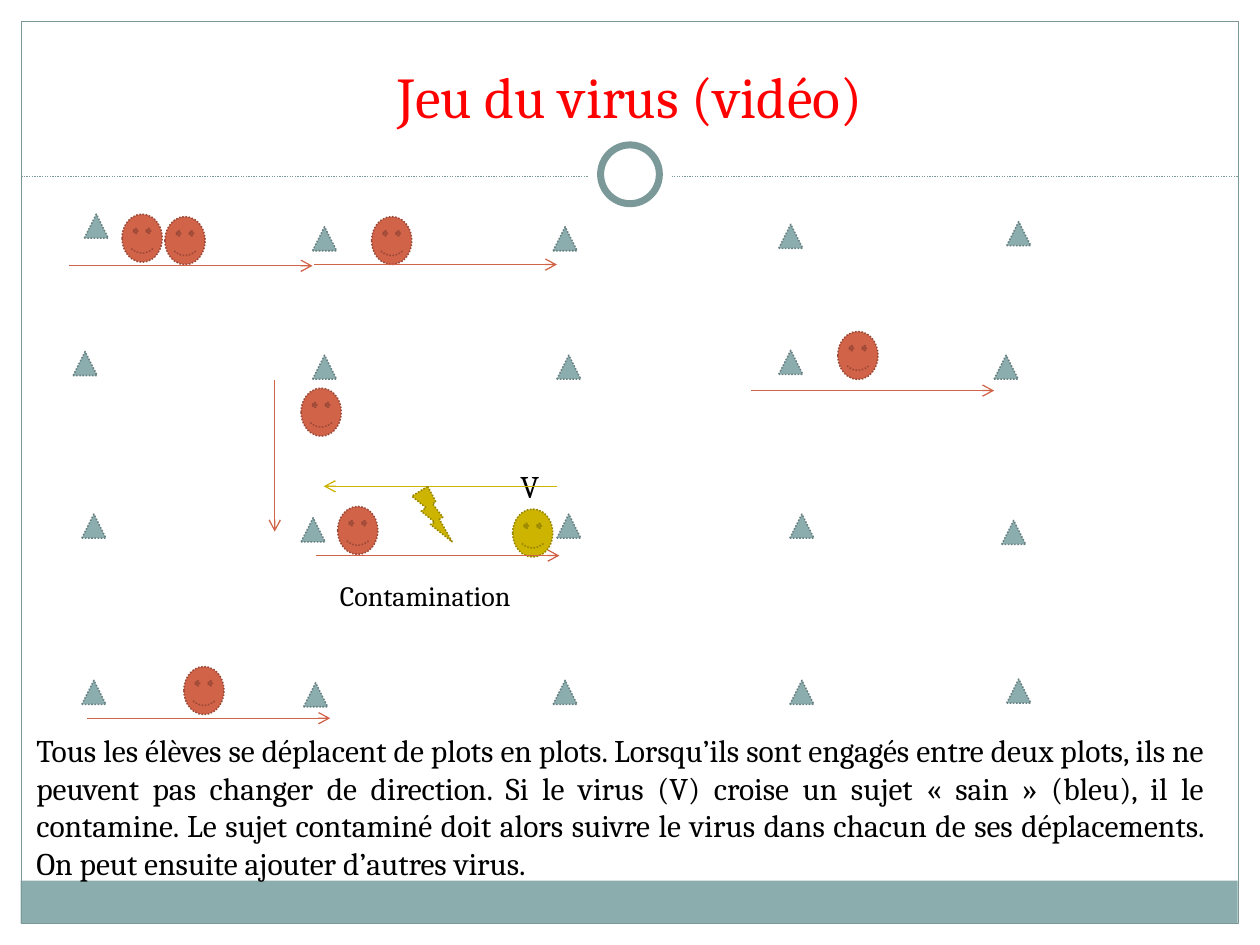
from lxml.etree import SubElement
from pptx import Presentation
from pptx.dml.color import RGBColor
from pptx.enum.dml import MSO_LINE
from pptx.enum.shapes import MSO_CONNECTOR, MSO_SHAPE
from pptx.enum.text import MSO_ANCHOR, MSO_AUTO_SIZE, PP_ALIGN
from pptx.oxml.ns import qn
from pptx.util import Pt

TEAL = RGBColor(0x8C, 0xAD, 0xAE)
TEAL_FRAME = RGBColor(0x7C, 0x99, 0x9A)
TEAL_EDGE = RGBColor(0x68, 0x80, 0x81)
HEALTHY = RGBColor(0xD1, 0x63, 0x49)
HEALTHY_EDGE = RGBColor(0x9B, 0x49, 0x36)
VIRUS = RGBColor(0xCC, 0xB4, 0x00)
VIRUS_EDGE = RGBColor(0x97, 0x85, 0x00)
RED = RGBColor(0xFF, 0x00, 0x00)
BLACK = RGBColor(0x00, 0x00, 0x00)
WHITE = RGBColor(0xFF, 0xFF, 0xFF)

CONE_COLUMNS = [
    [(48.2, 122.4), (41.8, 200.9), (46.8, 293.8), (46.8, 388.8)],
    [(178.6, 129.6), (178.6, 203), (172.1, 295.9), (173.5, 390.2)],
    [(316.1, 129.6), (318.2, 203), (318.2, 293.8), (316.1, 388.8)],
    [(445, 128.2), (445, 200.2), (451.4, 293.8), (451.4, 388.8)],
    [(575.3, 126.7), (568.1, 203), (572.4, 297.4), (575.3, 388.1)],
]
HEALTHY_PUPILS = [
    (69.8, 122.4), (94.3, 123.8), (478.8, 189.4), (212.4, 123.8),
    (105.1, 380.9), (193, 289.4), (172.1, 221.8),
]
RUN_LENGTH = 139
RUN_STARTS = [
    (180.7, 317.5), (49.7, 410.4), (429.1, 223.2), (179.3, 151.2), (39.6, 151.9),
]
RULES = (
    "Tous les élèves se déplacent de plots en plots. Lorsqu’ils sont engagés "
    "entre deux plots, ils ne peuvent pas changer de direction. Si le virus (V) "
    "croise un sujet « sain » (bleu), il le contamine. Le sujet contaminé doit "
    "alors suivre le virus dans chacun de ses déplacements. On peut ensuite "
    "ajouter d’autres virus."
)


def write_text(frame, text, *, size=18, color=BLACK, align=PP_ALIGN.LEFT,
               anchor=MSO_ANCHOR.TOP, fit=MSO_AUTO_SIZE.SHAPE_TO_FIT_TEXT):
    """Fill a text frame with one formatted paragraph."""
    frame.word_wrap = True
    frame.auto_size = fit
    frame.vertical_anchor = anchor
    paragraph = frame.paragraphs[0]
    paragraph.alignment = align
    run = paragraph.add_run()
    run.text = text
    run.font.name = "Cambria"
    run.font.size = Pt(size)
    run.font.color.rgb = color


def add_label(slide, text, left, top, width, height, **text_format):
    """Add a text box with formatted text."""
    label = slide.shapes.add_textbox(Pt(left), Pt(top), Pt(width), Pt(height))
    write_text(label.text_frame, text, **text_format)


def add_figure(slide, preset, left, top, width, height, *, fill=None, edge=None,
               weight=0.9, dash=MSO_LINE.ROUND_DOT):
    """Add a preset shape with a plain fill and outline."""
    figure = slide.shapes.add_shape(preset, Pt(left), Pt(top), Pt(width), Pt(height))
    figure.shadow.inherit = False
    if fill is None:
        figure.fill.background()
    else:
        figure.fill.solid()
        figure.fill.fore_color.rgb = fill
    if edge is None:
        figure.line.fill.background()
    else:
        figure.line.color.rgb = edge
        figure.line.width = Pt(weight)
        figure.line.dash_style = dash


def add_line(slide, start, end, color):
    """Add a thin straight line without shadow."""
    line = slide.shapes.add_connector(
        MSO_CONNECTOR.STRAIGHT, *(Pt(length) for length in (*start, *end)))
    line.line.color.rgb = color
    line.line.width = Pt(0.75)
    SubElement(line._element.spPr, qn("a:effectLst"))
    return line


def add_arrow(slide, start, end, color=HEALTHY):
    """Add a line with an open arrowhead at its end."""
    arrow = add_line(slide, start, end, color)
    SubElement(arrow._element.spPr.find(qn("a:ln")), qn("a:tailEnd"), type="arrow")


def add_pupil(slide, left, top, fill=HEALTHY, edge=HEALTHY_EDGE):
    """Add a smiling pupil."""
    add_figure(slide, MSO_SHAPE.SMILEY_FACE, left, top, 22.9, 27.4, fill=fill, edge=edge)


def add_frame(slide):
    """Add the footer band, border, divider and ring."""
    add_figure(slide, MSO_SHAPE.RECTANGLE, 11.8, 503.3, 695.5, 24.5, fill=TEAL)
    add_figure(slide, MSO_SHAPE.RECTANGLE, 12.2, 12.2, 695.5, 515.5,
               edge=TEAL_FRAME, weight=0.75, dash=MSO_LINE.SOLID)
    divider = add_line(slide, (12.2, 100.8), (707.8, 100.8), TEAL_FRAME)
    divider.line.dash_style = MSO_LINE.ROUND_DOT
    add_figure(slide, MSO_SHAPE.OVAL, 336, 75.6, 48, 48, fill=WHITE)
    add_figure(slide, MSO_SHAPE.OVAL, 343.2, 82.8, 33.6, 33.6, fill=WHITE,
               edge=TEAL_FRAME, weight=4, dash=MSO_LINE.SOLID)


def add_title(slide, text):
    """Place and fill the title placeholder."""
    title = slide.shapes.title
    title.left, title.top, title.width, title.height = Pt(24), Pt(18), Pt(672), Pt(60)
    write_text(title.text_frame, text, size=33, color=RED, align=PP_ALIGN.CENTER,
               anchor=MSO_ANCHOR.BOTTOM, fit=MSO_AUTO_SIZE.NONE)


def main():
    """Build the slide of the virus game."""
    deck = Presentation()
    deck.slide_width, deck.slide_height = Pt(720), Pt(540)
    slide = deck.slides.add_slide(deck.slide_layouts[5])
    add_frame(slide)
    add_title(slide, "Jeu du virus (vidéo)")

    for column in CONE_COLUMNS:
        for left, top in column:
            add_figure(slide, MSO_SHAPE.FLOWCHART_EXTRACT, left, top, 13.7, 13.7,
                       fill=TEAL, edge=TEAL_EDGE)
    for left, top in HEALTHY_PUPILS:
        add_pupil(slide, left, top)
    add_pupil(slide, 293, 290.9, VIRUS, VIRUS_EDGE)
    add_label(slide, "V", 290.2, 263.5, 29.5, 28.8)

    for left, top in RUN_STARTS:
        add_arrow(slide, (left, top), (left + RUN_LENGTH, top))
    add_arrow(slide, (157, 217.4), (157, 303.8))
    add_arrow(slide, (318.2, 277.9), (185, 277.9), VIRUS)
    add_figure(slide, MSO_SHAPE.LIGHTNING_BOLT, 235.4, 277.9, 23, 31.7,
               fill=VIRUS, edge=VIRUS_EDGE)

    add_label(slide, RULES, 13.7, 414, 681.8, 94.3, align=PP_ALIGN.JUSTIFY)
    add_label(slide, "Contamination", 187.2, 326.9, 117.4, 26.6, size=16)
    deck.save("out.pptx")


if __name__ == "__main__":
    main()
